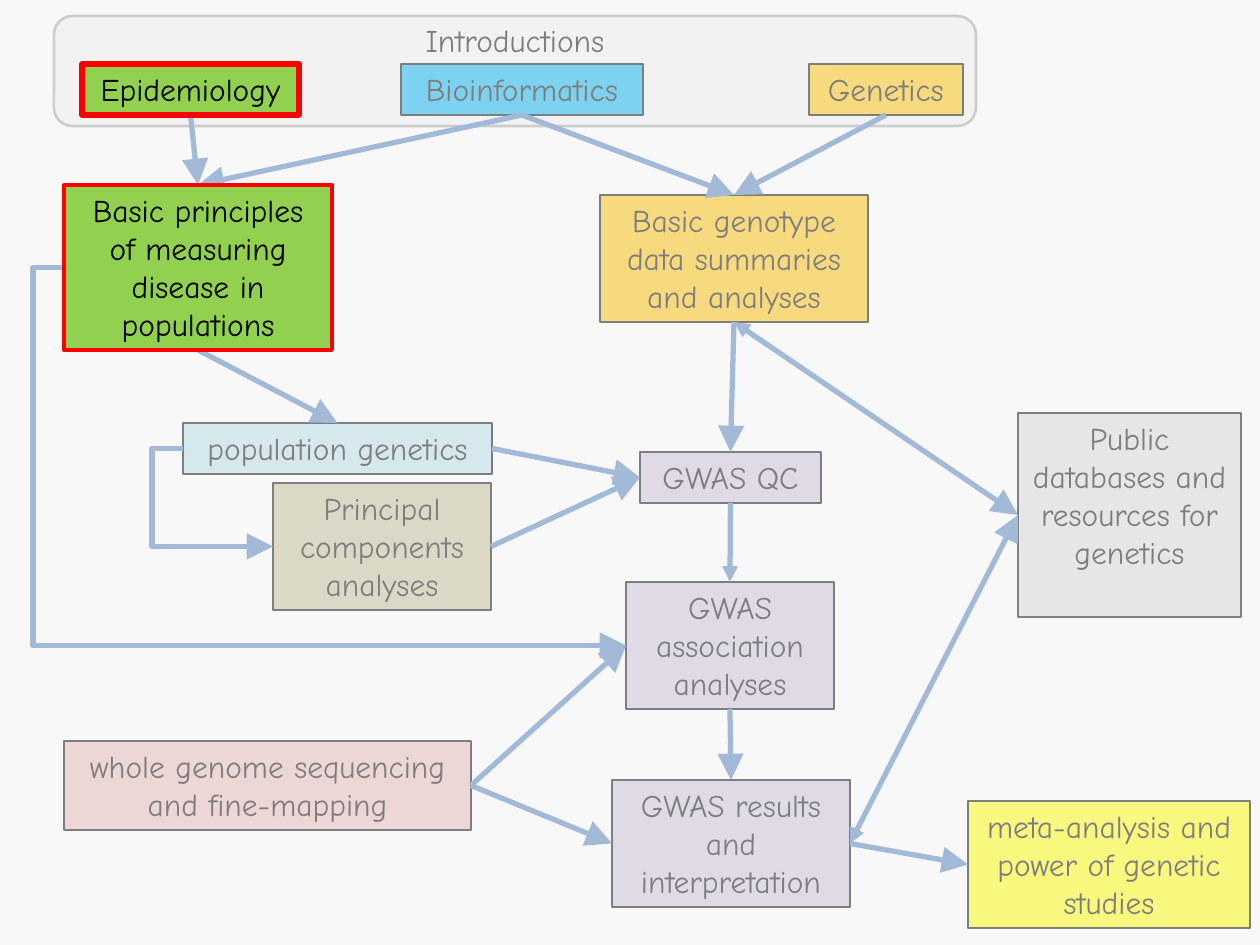
from lxml import etree
from pptx import Presentation
from pptx.dml.color import RGBColor
from pptx.enum.shapes import MSO_CONNECTOR, MSO_SHAPE
from pptx.enum.text import MSO_ANCHOR, PP_ALIGN
from pptx.oxml.ns import qn
from pptx.util import Pt

RECT, ROUND = MSO_SHAPE.RECTANGLE, MSO_SHAPE.ROUNDED_RECTANGLE
LINE, ELBOW = MSO_CONNECTOR.STRAIGHT, MSO_CONNECTOR.ELBOW
TOP, CENTER = MSO_ANCHOR.TOP, PP_ALIGN.CENTER
UP, LEFT, DOWN, RIGHT = range(4)
SCALE = 914400 / 126
WIDE, HIGH = 1260, 945
REACH = 31
FONT = "Comic Neue"

COLORS = {
    "ink": "000000", "pale": "F2F2F2", "edge": "A6A6A6", "link": "4B7EBC",
    "gray": "D9D9D9", "rose": "E6B9B8", "yellow": "FFFF00", "gold": "FFC000",
    "blue": "00B0F0", "mauve": "CCC1DA", "aqua": "B7DEE8", "tan": "C4BD97",
    "green": "92D050", "red": "FF0000",
}

BOXES = {
    "public": ("Public databases and resources for genetics", (1018, 413, 223, 204), "gray"),
    "genome": ("whole genome sequencing and fine-mapping", (64, 741, 407, 89), "rose"),
    "meta": ("meta-analysis and power of genetic studies", (968, 801, 282, 127), "yellow"),
    "genes": ("Genetics", (809, 64, 154, 51), "gold"),
    "bio": ("Bioinformatics", (401, 64, 242, 51), "blue"),
    "results": ("GWAS results and interpretation", (612, 780, 238, 127), "mauve"),
    "qc": ("GWAS QC", (640, 452, 181, 51), "mauve"),
    "pop": ("population genetics", (183, 423, 309, 51), "aqua"),
    "pca": ("Principal components analyses", (273, 483, 218, 127), "tan"),
    "geno": ("Basic genotype data summaries and analyses", (600, 195, 268, 127), "gold"),
    "assoc": ("GWAS association analyses", (626, 582, 208, 127), "mauve"),
    "epi": ("Epidemiology", (82, 64, 217, 51), "green"),
    "basic": ("Basic principles of measuring disease in populations", (64, 185, 268, 165), "green"),
}
FOCUS = {"epi": 3, "basic": 2.25}

LINKS = [
    ("genes", DOWN, "geno", UP, {}),
    ("epi", DOWN, "basic", UP, {}),
    ("bio", DOWN, "geno", UP, {}),
    ("bio", DOWN, "basic", UP, {}),
    ("geno", DOWN, "qc", UP, {}),
    ("qc", DOWN, "assoc", UP, {"tail": "med"}),
    ("assoc", DOWN, "results", UP, {}),
    ("results", RIGHT, "meta", LEFT, {}),
    ("pop", RIGHT, "qc", LEFT, {}),
    ("pca", RIGHT, "qc", LEFT, {}),
    ("results", RIGHT, "public", LEFT, {"head": "med"}),
    ("geno", DOWN, "public", LEFT, {"head": "med"}),
    ("genome", RIGHT, "assoc", LEFT, {}),
    ("genome", RIGHT, "results", LEFT, {}),
    ("basic", DOWN, "pop", UP, {}),
    ("pop", LEFT, "pca", LEFT, {"kind": ELBOW}),
    ("basic", LEFT, "assoc", LEFT, {"kind": ELBOW}),
]


def px(n):
    return round(n * SCALE)


def color(name):
    return RGBColor.from_string(COLORS[name])


def add_text(shape, text, size=18, wrap=True, inset=None):
    frame = shape.text_frame
    frame.word_wrap = wrap
    frame.vertical_anchor = TOP
    if inset is not None:
        frame.margin_top = px(inset)
    para = frame.paragraphs[0]
    para.alignment = CENTER
    run = para.add_run()
    run.text = text
    run.font.name, run.font.size = FONT, Pt(size)
    run.font.color.rgb = color("ink")


def add_box(spot, fill, line=None, width=0.75, kind=RECT):
    shape = slide.shapes.add_shape(kind, *map(px, spot))
    shape.shadow.inherit = False
    shape.fill.solid()
    shape.fill.fore_color.rgb = color(fill)
    if line:
        shape.line.color.rgb = color(line)
        shape.line.width = Pt(width)
    else:
        shape.line.fill.background()
    return shape


def add_link(start, side, end, goal, kind=LINE, head=None, tail="lg"):
    link = slide.shapes.add_connector(kind, 0, 0, 0, 0)
    link.begin_connect(start, side)
    link.end_connect(end, goal)
    link.line.color.rgb = color("link")
    link.line.width = Pt(3)
    props = link._element.spPr
    for tag, size in (("a:headEnd", head), ("a:tailEnd", tail)):
        if size:
            etree.SubElement(props.find(qn("a:ln")), qn(tag), type="triangle", w=size, len=size)
    etree.SubElement(props, qn("a:effectLst"))
    if kind == ELBOW:
        ratio = round(-px(REACH) / link.width * 100000)
        guides = props.find(qn("a:prstGeom")).find(qn("a:avLst"))
        etree.SubElement(guides, qn("a:gd"), name="adj1", fmla=f"val {ratio}")


deck = Presentation()
deck.slide_width, deck.slide_height = px(WIDE), px(HIGH)
slide = deck.slides.add_slide(deck.slide_layouts[6])

panel = add_box((54, 16, 922, 110), "pale", "edge", 1.5, ROUND)
add_text(panel, "Introductions", inset=0)

boxes = {}
for name, (text, spot, fill) in BOXES.items():
    line = "red" if name in FOCUS else "ink"
    boxes[name] = add_box(spot, fill, line, FOCUS.get(name, 0.75))
    add_text(boxes[name], text, wrap=" " in text and spot[3] > 51)

for start, side, end, goal, style in LINKS:
    add_link(boxes[start], side, boxes[end], goal, **style)

veil = add_box((0, -4, WIDE, HIGH + 4), "pale")
tint = veil._element.spPr.find(qn("a:solidFill"))[0]
etree.SubElement(tint, qn("a:alpha"), val="52000")

tree = veil._element.getparent()
for name in FOCUS:
    tree.append(boxes[name]._element)

deck.save("out.pptx")
